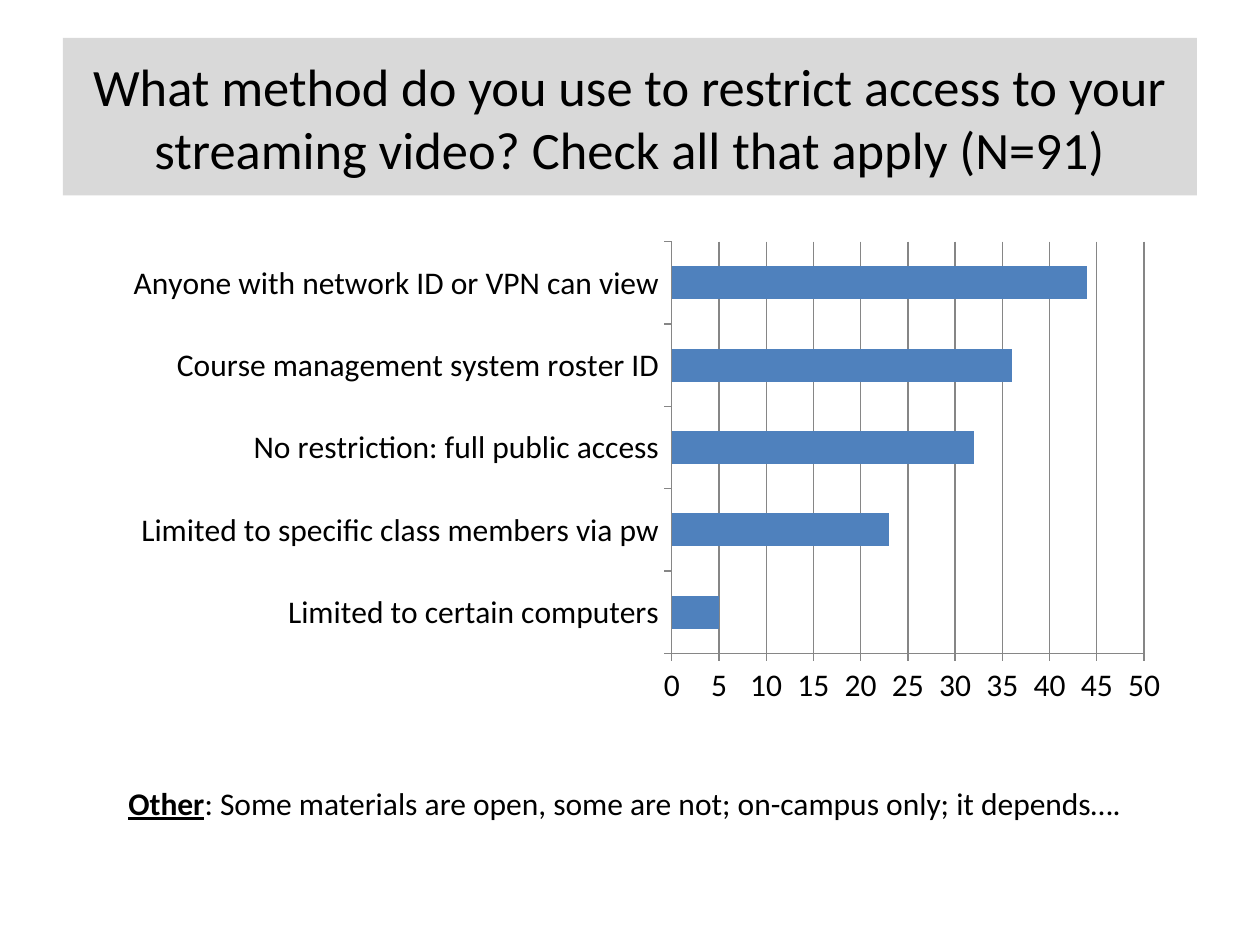
"""Build a survey slide with a title band, a bar chart and a closing remark."""
from dataclasses import dataclass

from lxml.etree import SubElement
from pptx import Presentation
from pptx.chart.data import CategoryChartData
from pptx.dml.color import RGBColor
from pptx.enum.chart import XL_CHART_TYPE as ChartType, XL_TICK_MARK as TickMark
from pptx.enum.text import MSO_ANCHOR as Anchor, PP_ALIGN as Align
from pptx.oxml.ns import qn
from pptx.util import Inches, Pt

FONT = "Calibri"
BLACK, BAND, BAR, RULE = "000000", "D9D9D9", "4F81BD", "868686"


@dataclass(frozen=True)
class Box:
    left: float
    top: float
    width: float
    height: float

    def inches(self) -> tuple:
        return tuple(map(Inches, (self.left, self.top, self.width, self.height)))


@dataclass(frozen=True)
class Phrase:
    text: str
    size: int = 18
    strong: bool = False


@dataclass(frozen=True)
class Method:
    label: str
    count: int


METHODS = [
    Method("Limited to certain computers", 5),
    Method("Limited to specific class members via pw", 23),
    Method("No restriction: full public access", 32),
    Method("Course management system roster ID", 36),
    Method("Anyone with network ID or VPN can view", 44),
]
PLOT_LAYOUT = {
    "layoutTarget": "inner", "xMode": "edge", "yMode": "edge",
    "x": 0.566, "y": 0.019, "w": 0.398, "h": 0.7,
}


def color(hex_value: str) -> RGBColor:
    return RGBColor.from_string(hex_value)


def style_font(font, size: int, **extras) -> None:
    for name, value in {"name": FONT, "size": Pt(size), **extras}.items():
        setattr(font, name, value)
    font.color.rgb = color(BLACK)


def add_text(slide, box: Box, phrases: list[Phrase], anchor, fill: str | None = None) -> None:
    holder = slide.shapes.add_textbox(*box.inches())
    if fill:
        holder.fill.solid()
        holder.fill.fore_color.rgb = color(fill)
    frame = holder.text_frame
    frame.word_wrap, frame.vertical_anchor = True, anchor
    paragraph = frame.paragraphs[0]
    paragraph.alignment = Align.CENTER
    for phrase in phrases:
        run = paragraph.add_run()
        run.text = phrase.text
        style_font(run.font, phrase.size, bold=phrase.strong, underline=phrase.strong)


def style_axis(axis, gridlines: bool) -> None:
    options = {
        "has_major_gridlines": gridlines,
        "major_tick_mark": TickMark.OUTSIDE,
        "minor_tick_mark": TickMark.NONE,
    }
    for name, value in options.items():
        setattr(axis, name, value)
    lines = [axis.format.line]
    if gridlines:
        lines.append(axis.major_gridlines.format.line)
    for line in lines:
        line.color.rgb = color(RULE)
        line.width = Pt(0.75)


def place_plot(chart) -> None:
    plot_area = chart.element.find(f".//{qn('c:plotArea')}")
    layout = plot_area.find(qn("c:layout"))
    if layout is None:
        layout = SubElement(plot_area, qn("c:layout"))
        plot_area.insert(0, layout)
    manual = SubElement(layout, qn("c:manualLayout"))
    for name, value in PLOT_LAYOUT.items():
        SubElement(manual, qn(f"c:{name}")).set("val", str(value))


def add_method_chart(slide, box: Box, methods: list[Method]) -> None:
    data = CategoryChartData()
    data.categories = [method.label for method in methods]
    data.add_series("Series 1", [method.count for method in methods])
    chart = slide.shapes.add_chart(ChartType.BAR_CLUSTERED, *box.inches(), data).chart
    chart.has_legend = chart.has_title = False
    style_font(chart.font, 18)
    style_axis(chart.category_axis, gridlines=False)
    style_axis(chart.value_axis, gridlines=True)
    scale = {"minimum_scale": 0, "maximum_scale": 50, "major_unit": 5}
    for name, value in scale.items():
        setattr(chart.value_axis, name, value)
    bars = chart.plots[0]
    bars.gap_width, bars.vary_by_categories = 150, False
    fill = bars.series[0].format.fill
    fill.solid()
    fill.fore_color.rgb = color(BAR)
    place_plot(chart)


def main() -> None:
    deck = Presentation()
    deck.slide_width, deck.slide_height = Inches(10), Inches(7.5)
    slide = deck.slides.add_slide(deck.slide_layouts[6])
    question = Phrase(
        "What method do you use to restrict access to your streaming video? "
        "Check all that apply (N=91)", size=30)
    remark = [
        Phrase("Other", strong=True),
        Phrase(": Some materials are open, some are not; on-campus only; it depends…."),
    ]
    add_text(slide, Box(0.5, 0.3, 9, 1.25), [question], Anchor.MIDDLE, BAND)
    add_method_chart(slide, Box(0, 1.83, 9.42, 4.67), METHODS)
    add_text(slide, Box(0.5, 6.17, 8.92, 0.7), remark, Anchor.TOP)
    deck.save("out.pptx")


if __name__ == "__main__":
    main()
